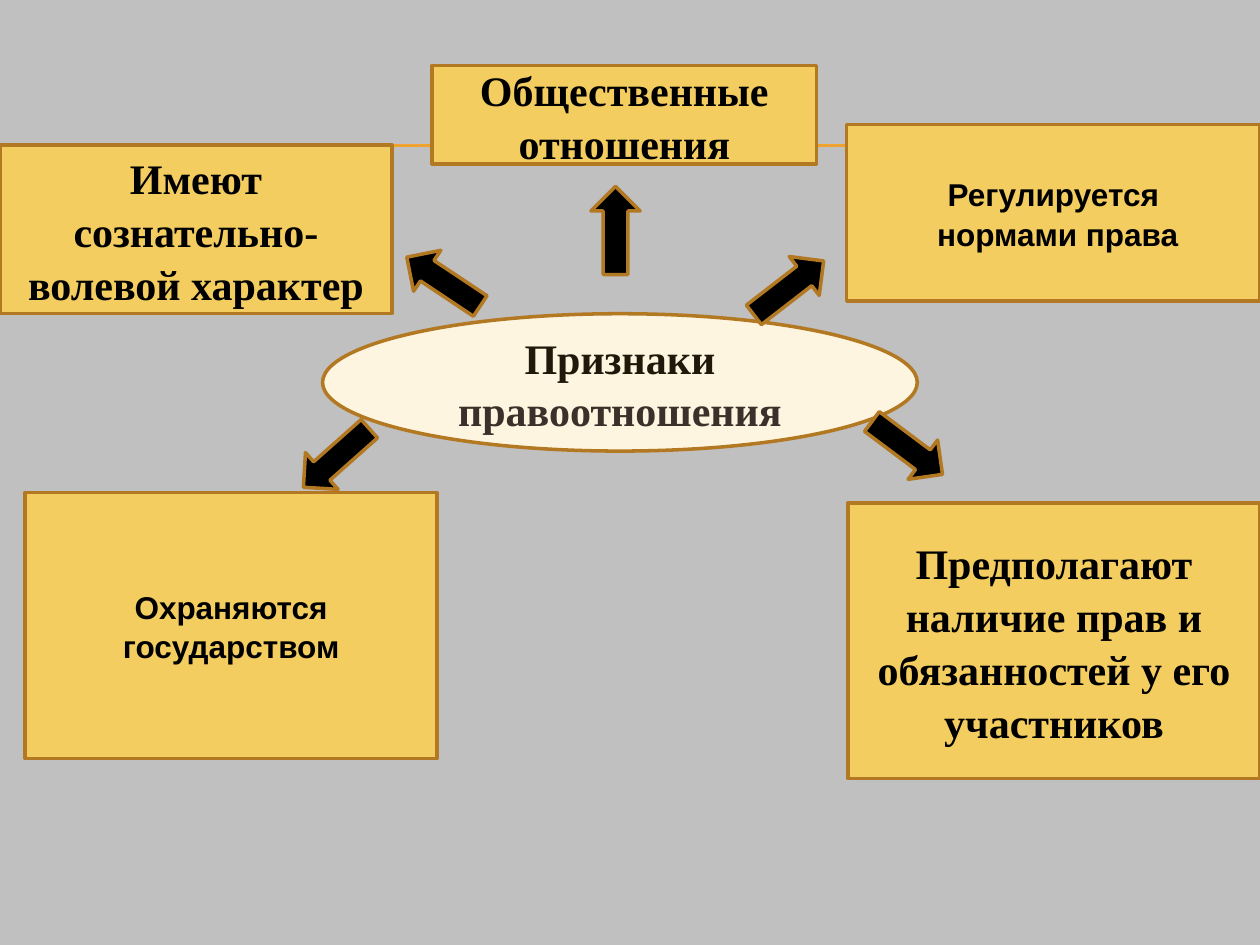
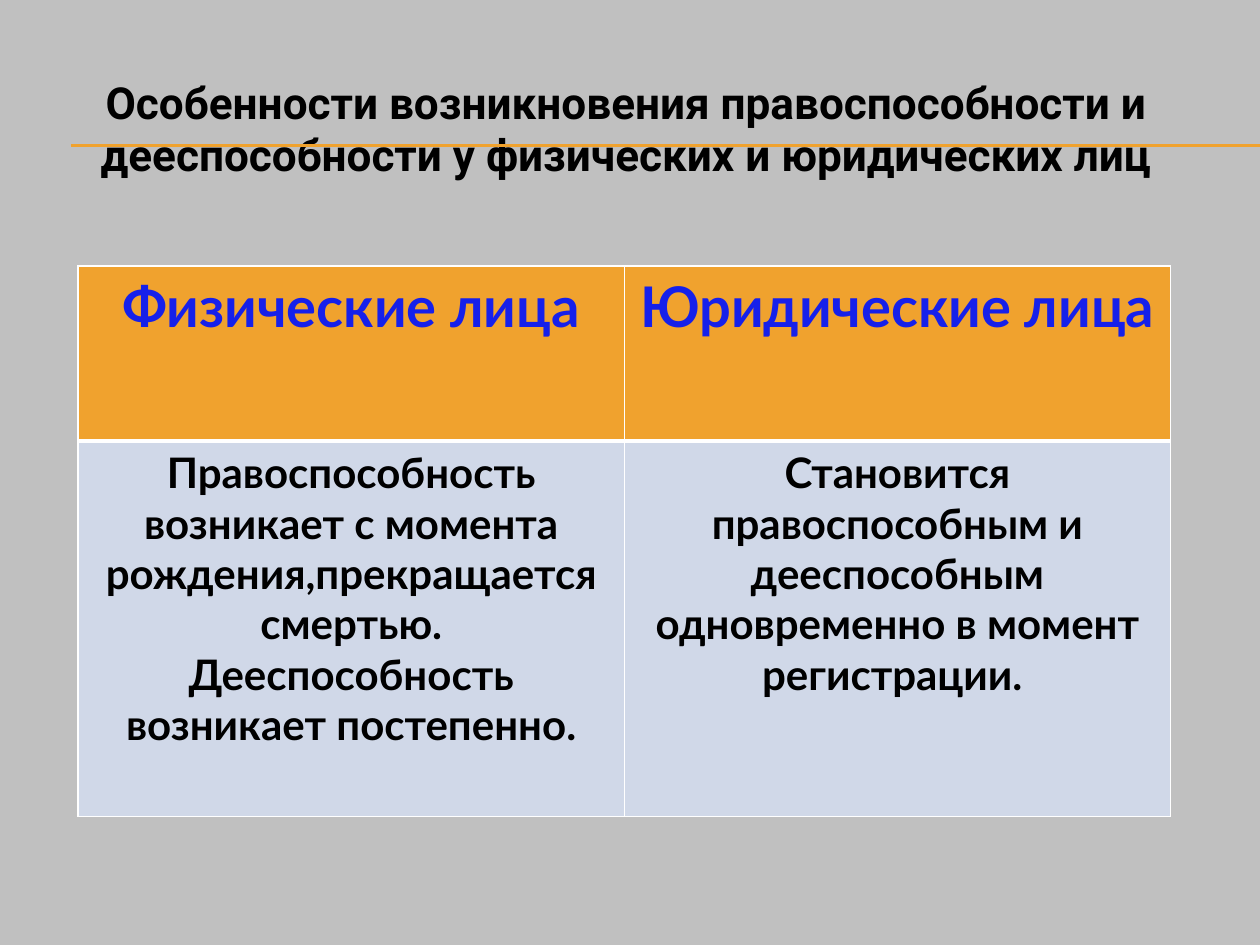
from pptx import Presentation
from pptx.dml.color import RGBColor
from pptx.enum.shapes import MSO_CONNECTOR, MSO_SHAPE
from pptx.enum.text import MSO_ANCHOR, PP_ALIGN
from pptx.oxml.ns import qn
from pptx.util import Inches, Pt
from lxml.etree import SubElement

GREY = RGBColor(0xC0, 0xC0, 0xC0)
AMBER = RGBColor(0xF0, 0xA2, 0x2E)
GOLD = RGBColor(0xF3, 0xCD, 0x60)
BROWN = RGBColor(0xB2, 0x78, 0x22)
CREAM = RGBColor(0xFD, 0xF5, 0xDF)
BLACK = RGBColor(0, 0, 0)
DARK = RGBColor(0x20, 0x19, 0x0B)
UMBER = RGBColor(0x3C, 0x30, 0x2A)
BLUE = RGBColor(0x16, 0x20, 0xEA)
PALE = RGBColor(0xD0, 0xD8, 0xE8)
WHITE = RGBColor(0xFF, 0xFF, 0xFF)

SERIF = ("Times New Roman", 24)
SANS = ("Arial", 18)
TITLE = ("Roboto", 25.2)
HEAD = ("Lato", 32)
BODY = ("Lato", 24)
COLS, ROWS = 100, 75


class Deck:
    def __init__(self):
        self.prs = Presentation()
        self.prs.slide_width = Inches(10)
        self.prs.slide_height = Inches(7.5)
        self.slide = None

    def grid(self, left, top, width, height):
        col = self.prs.slide_width / COLS
        row = self.prs.slide_height / ROWS
        return [round(n * unit) for n, unit in zip((left, top, width, height), (col, row) * 2)]

    def page(self, layout):
        self.slide = self.prs.slides.add_slide(self.prs.slide_layouts.get_by_name(layout))
        fill = self.slide.background.fill
        fill.solid()
        fill.fore_color.rgb = GREY
        for row in (11.5, 11.6):
            self.rule(row)

    def rule(self, row):
        left, top, right, _ = self.grid(5.6, row, COLS, 0)
        line = self.slide.shapes.add_connector(MSO_CONNECTOR.STRAIGHT, left, top, right, top)
        line.line.color.rgb = AMBER
        line.line.width = Pt(0.75)
        SubElement(line._element.spPr, qn("a:effectLst"))

    def label(self, frame, paras, font, space=None):
        frame.word_wrap = True
        for i, runs in enumerate(paras):
            para = frame.add_paragraph() if i else frame.paragraphs[0]
            para.alignment = PP_ALIGN.CENTER
            para.line_spacing = space
            for text, color in runs:
                run = para.add_run()
                run.text = text
                run.font.name, size = font
                run.font.size = Pt(size)
                run.font.bold = True
                run.font.color.rgb = color

    def shape(self, kind, area, fill, turn=0):
        shape = self.slide.shapes.add_shape(kind, *self.grid(*area))
        shape.shadow.inherit = False
        shape.fill.solid()
        shape.fill.fore_color.rgb = fill
        shape.line.color.rgb = BROWN
        shape.line.width = Pt(2)
        shape.rotation = turn
        return shape

    def box(self, area, paras, font, kind=MSO_SHAPE.RECTANGLE, fill=GOLD):
        frame = self.shape(kind, area, fill).text_frame
        frame.vertical_anchor = MSO_ANCHOR.MIDDLE
        self.label(frame, paras, font, 1.05)

    def title(self, text):
        title = self.slide.shapes.title
        title.left, title.top, title.width, title.height = self.grid(4.7, 3.9, 90, 12.5)
        title.text_frame.vertical_anchor = MSO_ANCHOR.MIDDLE
        self.label(title.text_frame, [[(text, BLACK)]], TITLE)

    def edge(self, cell, **widths):
        props = cell._tc.get_or_add_tcPr()
        for i, side in enumerate("LRTB"):
            line = props.makeelement(qn(f"a:ln{side}"), {"w": str(Pt(widths.get(side, 1)))})
            fill = SubElement(line, qn("a:solidFill"))
            SubElement(fill, qn("a:srgbClr"), val=str(WHITE))
            props.insert(i, line)

    def table(self, area, heights, rows):
        table = self.slide.shapes.add_table(len(rows), len(rows[0]), *self.grid(*area)).table
        styles = ((HEAD, BLUE, AMBER, {"B": 3}), (BODY, BLACK, PALE, {"T": 3}))
        for r, (texts, style) in enumerate(zip(rows, styles)):
            font, color, fill, thick = style
            table.rows[r].height = self.grid(0, 0, 0, heights[r])[3]
            for c, paras in enumerate(texts):
                cell = table.cell(r, c)
                cell.fill.solid()
                cell.fill.fore_color.rgb = fill
                self.label(cell.text_frame, [[(text, color)] for text in paras], font)
                self.edge(cell, **thick)


def signs(deck):
    deck.page("Blank")
    boxes = (
        ((34.3, 5.2, 30.5, 7.8), ["Общественные отношения"], SERIF),
        ((67.2, 9.9, 32.8, 14), ["Регулируется", " нормами права"], SANS),
        ((0, 11.5, 31.1, 13.4), ["Имеют сознательно-волевой характер"], SERIF),
        ((67.3, 39.9, 32.7, 21.9),
         ["Предполагают наличие прав и обязанностей у его участников"], SERIF),
        ((2, 39.1, 32.7, 21.1), ["Охраняются государством"], SANS),
    )
    for area, lines, font in boxes:
        deck.box(area, [[(text, BLACK)] for text in lines], font)
    deck.box((25.6, 24.9, 47.2, 10.9), [[("Признаки ", DARK), ("правоотношения", UMBER)]],
             SERIF, MSO_SHAPE.OVAL, CREAM)
    deck.shape(MSO_SHAPE.UP_ARROW, (46.9, 14.8, 3.9, 7), BLACK)
    arrows = ((31.7, 20.4, 33.6), (68.5, 33.6, 216.8), (23.2, 34.4, 318.4), (59.1, 20.9, 142.3))
    for left, top, turn in arrows:
        deck.shape(MSO_SHAPE.LEFT_ARROW, (left, top, 7, 3.9), BLACK, turn)


def origin(deck):
    deck.page("Title Only")
    deck.title("Особенности возникновения правоспособности и дееспособности "
               "у физических и юридических лиц")
    deck.table((6.2, 21.1, 86.7, 43.8), (13.9, 29.8), (
        (["Физические лица"], ["Юридические лица"]),
        (["Правоспособность возникает с момента рождения,прекращается смертью.",
          "Дееспособность возникает постепенно."],
         ["Становится правоспособным и дееспособным одновременно в момент регистрации. "]),
    ))


def main():
    deck = Deck()
    signs(deck)
    origin(deck)
    deck.prs.save("out.pptx")


if __name__ == "__main__":
    main()
